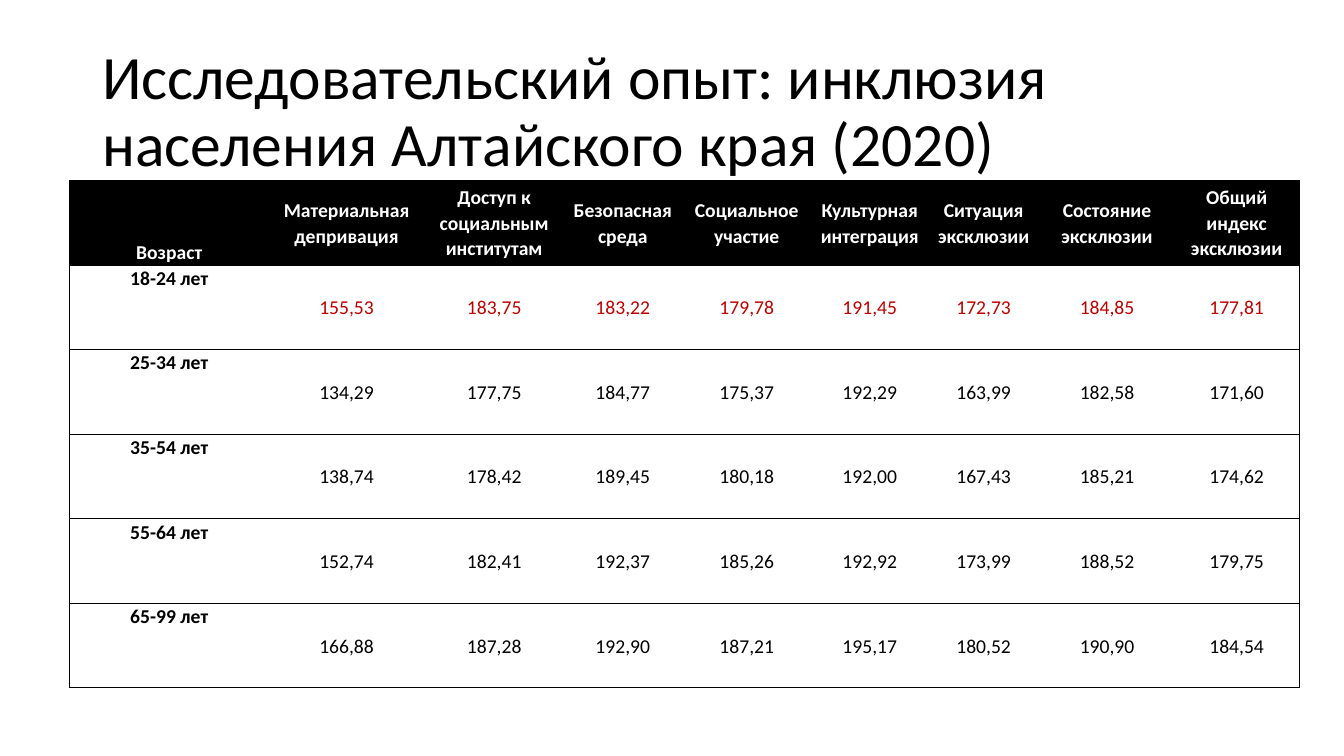
"""Build a slide with a table of inclusion indices by age group."""
import dataclasses

import lxml.etree
import pptx
import pptx.dml.color
import pptx.enum.text
import pptx.oxml.ns
import pptx.slide
import pptx.table
import pptx.text.text
import pptx.util

Cm = pptx.util.Cm
Pt = pptx.util.Pt
RGBColor = pptx.dml.color.RGBColor
Anchor = pptx.enum.text.MSO_ANCHOR
qn = pptx.oxml.ns.qn

BLACK = RGBColor(0x00, 0x00, 0x00)
WHITE = RGBColor(0xFF, 0xFF, 0xFF)
RED = RGBColor(0xC0, 0x00, 0x00)
FONT = "Calibri"
TITLE = "Исследовательский опыт: инклюзия населения Алтайского края (2020)"
WIDTHS = (5.03, 3.91, 3.53, 2.95, 3.3, 2.9, 2.84, 3.38, 3.15)
HEIGHT = 2.13


@dataclasses.dataclass(frozen=True)
class Band:
    label: str
    values: tuple[str, ...]
    color: RGBColor = BLACK
    head: bool = False


BANDS = (
    Band("Возраст", ("Материальная депривация", "Доступ к социальным институтам",
                     "Безопасная среда", "Социальное участие",
                     "Культурная интеграция", "Ситуация эксклюзии",
                     "Состояние эксклюзии", "Общий индекс эксклюзии"), WHITE, True),
    Band("18-24 лет", ("155,53", "183,75", "183,22", "179,78",
                       "191,45", "172,73", "184,85", "177,81"), RED),
    Band("25-34 лет", ("134,29", "177,75", "184,77", "175,37",
                       "192,29", "163,99", "182,58", "171,60")),
    Band("35-54 лет", ("138,74", "178,42", "189,45", "180,18",
                       "192,00", "167,43", "185,21", "174,62")),
    Band("55-64 лет", ("152,74", "182,41", "192,37", "185,26",
                       "192,92", "173,99", "188,52", "179,75")),
    Band("65-99 лет", ("166,88", "187,28", "192,90", "187,21",
                       "195,17", "180,52", "190,90", "184,54")),
)


def style(para: pptx.text.text._Paragraph, size: int, color: RGBColor,
          bold: bool, space: float) -> None:
    para.line_spacing = space
    para.font.name = FONT
    para.font.size = Pt(size)
    para.font.bold = bold
    para.font.color.rgb = color


def border(cell: pptx.table._Cell, sides: str) -> None:
    props = cell._tc.get_or_add_tcPr()
    for side in "LRTB":
        line = lxml.etree.SubElement(props, qn(f"a:ln{side}"), w=str(Pt(0.5)))
        if side in sides:
            fill = lxml.etree.SubElement(line, qn("a:solidFill"))
            lxml.etree.SubElement(fill, qn("a:srgbClr"), val=str(BLACK))
        else:
            lxml.etree.SubElement(line, qn("a:noFill"))


def fill_cell(cell: pptx.table._Cell, text: str, band: Band, col: int) -> None:
    first = col == 0
    cell.text = text
    cell.margin_left = cell.margin_right = Cm(0.18)
    cell.margin_top = cell.margin_bottom = Cm(0)
    if first:
        cell.vertical_anchor = Anchor.BOTTOM if band.head else Anchor.TOP
    else:
        cell.vertical_anchor = Anchor.MIDDLE
    para = cell.text_frame.paragraphs[0]
    para.alignment = pptx.enum.text.PP_ALIGN.CENTER
    color = BLACK if first and not band.head else band.color
    style(para, 14, color, first or band.head, 1.07)
    last = col == len(WIDTHS) - 1
    border(cell, "TB" + "L" * first + "R" * last)
    if band.head:
        cell.fill.solid()
        cell.fill.fore_color.rgb = BLACK
    else:
        cell.fill.background()


def add_title(slide: pptx.slide.Slide) -> None:
    box = slide.shapes.add_textbox(Cm(2.33), Cm(1.01), Cm(29.21), Cm(3.68))
    frame = box.text_frame
    frame.word_wrap = True
    frame.vertical_anchor = Anchor.MIDDLE
    frame.text = TITLE
    style(frame.paragraphs[0], 44, BLACK, False, 0.9)


def add_grid(slide: pptx.slide.Slide) -> None:
    grid = slide.shapes.add_table(
        len(BANDS), len(WIDTHS), Cm(1.75), Cm(4.55),
        Cm(sum(WIDTHS)), Cm(HEIGHT * len(BANDS))).table
    grid.horz_banding = False
    for col, width in zip(grid.columns, WIDTHS):
        col.width = Cm(width)
    for row, band in enumerate(BANDS):
        grid.rows[row].height = Cm(HEIGHT)
        for col, text in enumerate((band.label, *band.values)):
            fill_cell(grid.cell(row, col), text, band, col)


def main() -> None:
    deck = pptx.Presentation()
    deck.slide_width = Cm(33.87)
    deck.slide_height = Cm(19.05)
    slide = deck.slides.add_slide(deck.slide_layouts[6])
    add_title(slide)
    add_grid(slide)
    deck.save("out.pptx")


if __name__ == "__main__":
    main()
